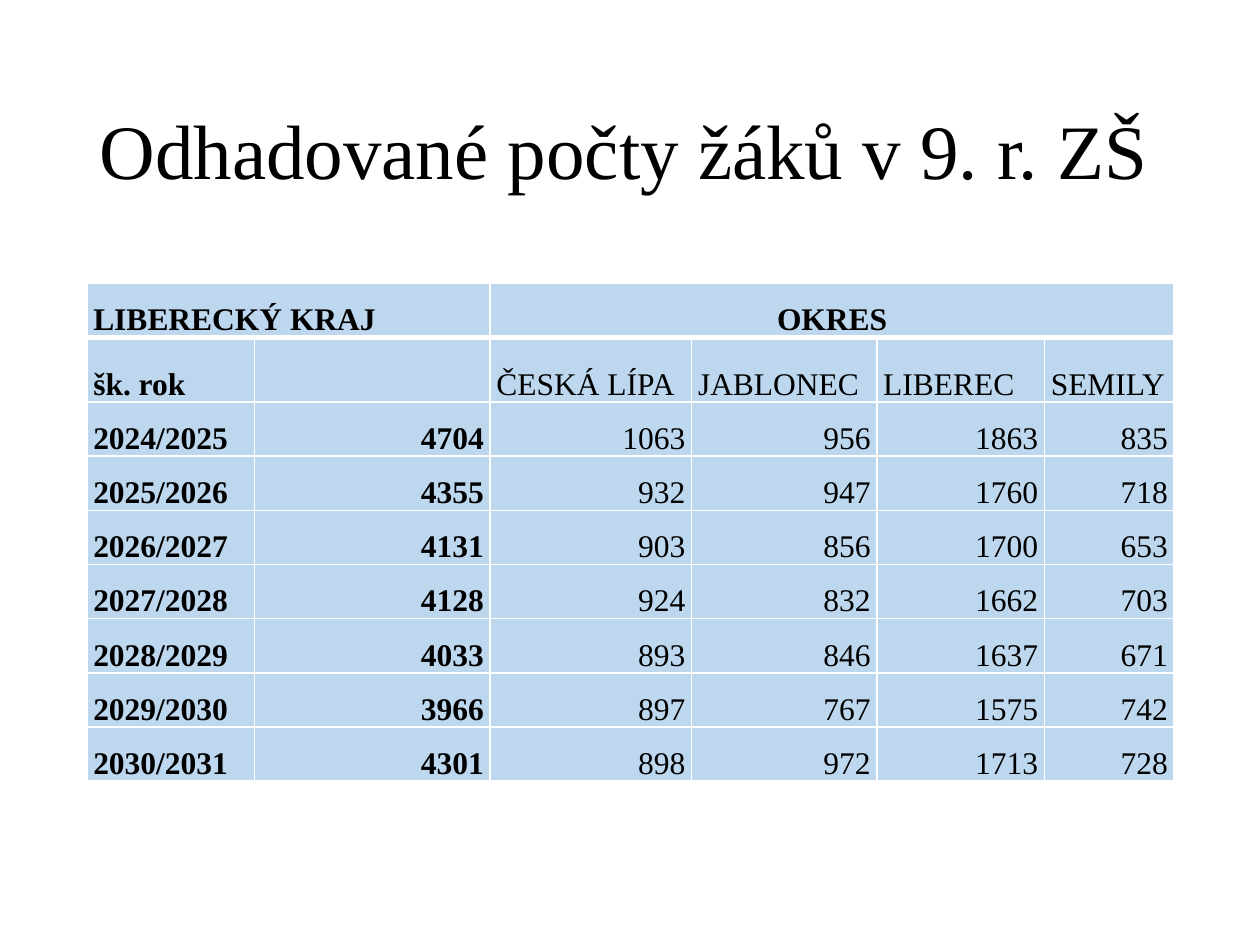
from dataclasses import dataclass

from lxml import etree
from pptx import Presentation
from pptx import util as u
from pptx.dml.color import RGBColor
from pptx.enum import text
from pptx.oxml.ns import qn

TITLE = "Odhadované počty žáků v 9. r. ZŠ"
REGION, DISTRICT = "LIBERECKÝ KRAJ", "OKRES"
COLUMNS = ["šk. rok", "", "ČESKÁ LÍPA", "JABLONEC", "LIBEREC", "SEMILY"]
PUPILS = [
    ("2024/2025", 4704, 1063, 956, 1863, 835),
    ("2025/2026", 4355, 932, 947, 1760, 718),
    ("2026/2027", 4131, 903, 856, 1700, 653),
    ("2027/2028", 4128, 924, 832, 1662, 703),
    ("2028/2029", 4033, 893, 846, 1637, 671),
    ("2029/2030", 3966, 897, 767, 1575, 742),
    ("2030/2031", 4301, 898, 972, 1713, 728),
]
REGION_COLUMNS = 2  # year and regional total; the districts follow

WIDTH, HEIGHT, MARGIN = 10, 7.5, 0.69
TITLE_TOP, TITLE_HEIGHT = 0.4, 1.45
TABLE_TOP = 0.3 * HEIGHT
COLUMN_WIDTHS = [1.33, 1.87, 1.6, 1.47, 1.33, 1.03]
ROW_HEIGHTS = [0.43, 0.51] + [0.43] * len(PUPILS)


@dataclass(frozen=True)
class Theme:
    font: str = "Times New Roman"
    title_size: int = 44
    cell_size: int = 18
    ink: str = "000000"
    cell: str = "BDD7EE"
    rule: str = "FFFFFF"
    thin: int = 1
    thick: int = 3


THEME = Theme()


def write(paragraph, words, size, bold=False):
    run = paragraph.add_run()
    run.text = words
    run.font.name, run.font.size, run.font.bold = THEME.font, u.Pt(size), bold
    run.font.color.rgb = RGBColor.from_string(THEME.ink)


def set_borders(cell, top, bottom):
    sides = [("lnL", THEME.thin), ("lnR", THEME.thin), ("lnT", top), ("lnB", bottom)]
    properties = cell._tc.get_or_add_tcPr()
    for place, (side, points) in enumerate(sides):
        line = etree.Element(qn(f"a:{side}"), w=str(u.Pt(points)))
        fill = etree.SubElement(line, qn("a:solidFill"))
        etree.SubElement(fill, qn("a:srgbClr"), val=THEME.rule)
        properties.insert(place, line)


def fill_cell(cell, row, column, value):
    cell.fill.solid()
    cell.fill.fore_color.rgb = RGBColor.from_string(THEME.cell)
    cell.vertical_anchor = text.MSO_ANCHOR.BOTTOM
    cell.margin_left = cell.margin_right = u.Inches(0.05)
    cell.margin_top = cell.margin_bottom = 0
    set_borders(cell,
                top=THEME.thick if row == 1 else THEME.thin,
                bottom=THEME.thick if row == 0 else THEME.thin)
    paragraph = cell.text_frame.paragraphs[0]
    if value == DISTRICT:
        paragraph.alignment = text.PP_ALIGN.CENTER
    elif isinstance(value, int):
        paragraph.alignment = text.PP_ALIGN.RIGHT
    if value != "":
        bold = row == 0 or column < REGION_COLUMNS
        write(paragraph, str(value), THEME.cell_size, bold)


def add_title(slide):
    title = slide.shapes.title
    title.left, title.top = u.Inches(MARGIN), u.Inches(TITLE_TOP)
    title.width, title.height = u.Inches(WIDTH - 2 * MARGIN), u.Inches(TITLE_HEIGHT)
    title.text_frame.vertical_anchor = text.MSO_ANCHOR.MIDDLE
    paragraph = title.text_frame.paragraphs[0]
    paragraph.alignment = text.PP_ALIGN.JUSTIFY
    paragraph.line_spacing = 1.15
    write(paragraph, TITLE, THEME.title_size)


def add_pupil_table(slide):
    district_columns = len(COLUMNS) - REGION_COLUMNS
    groups = ([REGION] + [""] * (REGION_COLUMNS - 1)
              + [DISTRICT] + [""] * (district_columns - 1))
    rows = [groups, COLUMNS, *PUPILS]
    table = slide.shapes.add_table(
        len(rows), len(COLUMNS), u.Inches(MARGIN), u.Inches(TABLE_TOP),
        u.Inches(sum(COLUMN_WIDTHS)), u.Inches(sum(ROW_HEIGHTS))).table
    table.horz_banding = False
    for column, width in zip(table.columns, COLUMN_WIDTHS):
        column.width = u.Inches(width)
    for row, height in zip(table.rows, ROW_HEIGHTS):
        row.height = u.Inches(height)
    for r, values in enumerate(rows):
        for c, value in enumerate(values):
            fill_cell(table.cell(r, c), r, c, value)
    table.cell(0, 0).merge(table.cell(0, REGION_COLUMNS - 1))
    table.cell(0, REGION_COLUMNS).merge(table.cell(0, len(COLUMNS) - 1))


def main():
    deck = Presentation()
    deck.slide_width, deck.slide_height = u.Inches(WIDTH), u.Inches(HEIGHT)
    slide = deck.slides.add_slide(deck.slide_layouts[5])
    add_title(slide)
    add_pupil_table(slide)
    deck.save("out.pptx")


if __name__ == "__main__":
    main()
